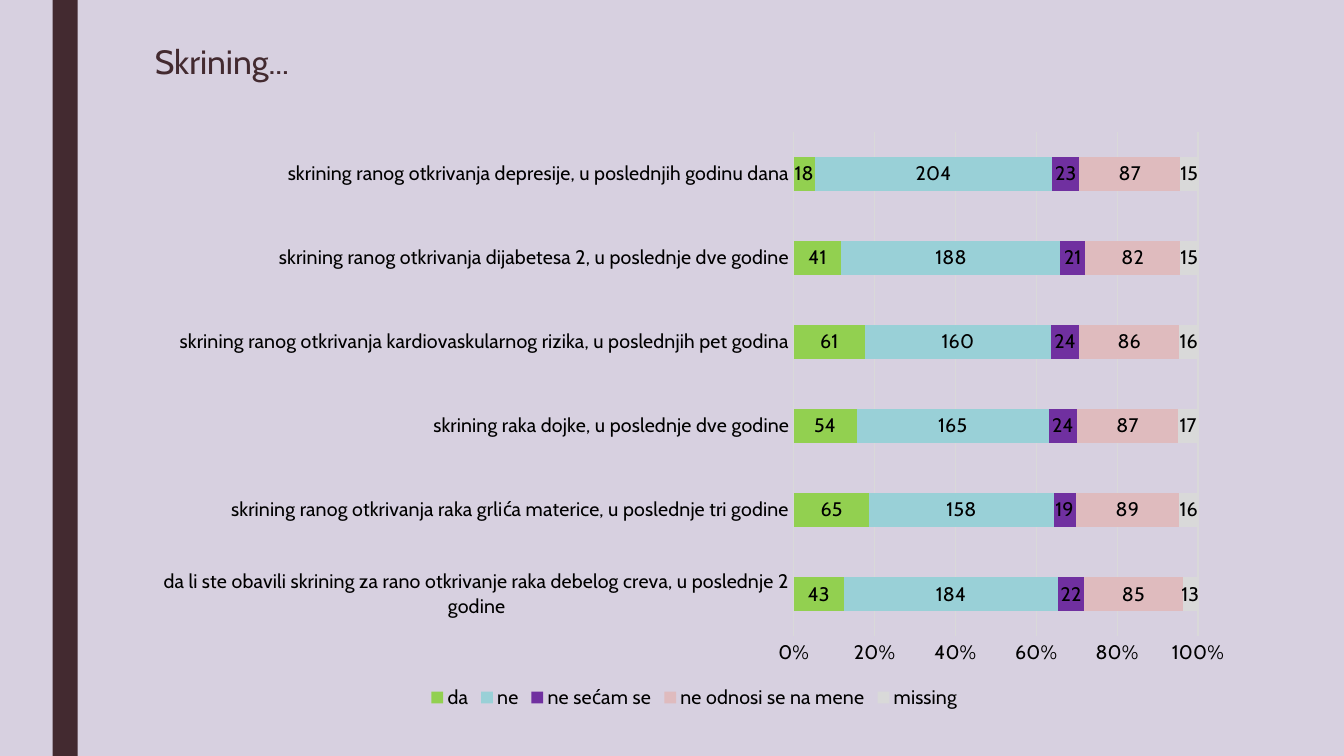
from lxml import etree
from pptx import Presentation
from pptx.chart.data import CategoryChartData
from pptx.dml.color import RGBColor
from pptx.enum.chart import XL_CHART_TYPE, XL_LABEL_POSITION, XL_LEGEND_POSITION, XL_TICK_MARK
from pptx.enum.shapes import MSO_SHAPE
from pptx.enum.text import MSO_ANCHOR
from pptx.oxml import parse_xml
from pptx.oxml.ns import nsdecls, qn
from pptx.util import Pt

FONT = "Cabin"
BACKGROUND, DARK, GREY, BLACK = "D7D0E0", "432A30", "D9D9D9", "000000"

# Categories run from the bottom bar to the top bar
SCREENINGS = [
    "da li ste obavili skrining za rano otkrivanje raka debelog creva, u poslednje 2 godine",
    "skrining ranog otkrivanja raka grlića materice, u poslednje tri godine",
    "skrining raka dojke, u poslednje dve godine",
    "skrining ranog otkrivanja kardiovaskularnog rizika, u poslednjih pet godina",
    "skrining ranog otkrivanja dijabetesa 2, u poslednje dve godine",
    "skrining ranog otkrivanja depresije, u poslednjih godinu dana",
]
ANSWERS = [
    ("da", "92D050", (43, 65, 54, 61, 41, 18)),
    ("ne", "99D0D7", (184, 158, 165, 160, 188, 204)),
    ("ne sećam se", "7030A0", (22, 19, 24, 24, 21, 23)),
    ("ne odnosi se na mene", "DFBBBE", (85, 89, 87, 86, 82, 87)),
    ("missing", GREY, (13, 16, 17, 16, 15, 15)),
]


def rgb(value):
    return RGBColor.from_string(value)


def set_font(font, size, color):
    font.name, font.size = FONT, Pt(size)
    font.color.rgb = rgb(color)


def set_line(line, color, width):
    line.color.rgb = rgb(color)
    line.width = Pt(width)


def add_side_band(s, x, y, w, h):
    sp = s.shapes.add_shape(MSO_SHAPE.RECTANGLE, Pt(x), Pt(y), Pt(w), Pt(h))
    sp.shadow.inherit = False
    sp.fill.solid()
    sp.fill.fore_color.rgb = rgb(DARK)
    sp.line.fill.background()


def add_title(s, text, x, y, w, h):
    tf = s.shapes.add_textbox(Pt(x), Pt(y), Pt(w), Pt(h)).text_frame
    tf.word_wrap = True
    tf.vertical_anchor = MSO_ANCHOR.TOP
    p = tf.paragraphs[0]
    p.text = text
    p.line_spacing = 0.89
    set_font(p.font, 24, DARK)


def set_plot_box(chart, **box):
    """Fix the inner plot area, in fractions of the chart."""
    plot_area = chart._chartSpace.chart.plotArea
    for old in plot_area.findall(qn("c:layout")):
        plot_area.remove(old)
    layout = parse_xml(f"<c:layout {nsdecls('c')}><c:manualLayout/></c:layout>")
    settings = {"layoutTarget": "inner", "xMode": "edge", "yMode": "edge", **box}
    for tag, value in settings.items():
        etree.SubElement(layout[0], qn(f"c:{tag}")).set("val", str(value))
    plot_area.insert(0, layout)


def add_answer_chart(s, x, y, w, h):
    data = CategoryChartData()
    data.categories = SCREENINGS
    for name, _, values in ANSWERS:
        data.add_series(name, values)
    chart = s.shapes.add_chart(
        XL_CHART_TYPE.BAR_STACKED_100, Pt(x), Pt(y), Pt(w), Pt(h), data).chart
    set_font(chart.font, 14, BLACK)
    chart.has_title = False
    set_plot_box(chart, x=0.59, y=0.02, w=0.366, h=0.85)

    # Bars and their values
    plot = chart.plots[0]
    plot.gap_width, plot.overlap = 150, 100
    plot.vary_by_categories = False
    for series, (_, color, _) in zip(plot.series, ANSWERS):
        series.format.fill.solid()
        series.format.fill.fore_color.rgb = rgb(color)
        labels = series.data_labels
        labels.show_value = True
        labels.position = XL_LABEL_POSITION.CENTER
        set_font(labels.font, 14, BLACK)

    # Axes
    for axis in (chart.category_axis, chart.value_axis):
        axis.major_tick_mark = axis.minor_tick_mark = XL_TICK_MARK.NONE
        set_font(axis.tick_labels.font, 14, BLACK)
    set_line(chart.category_axis.format.line, GREY, 0.75)
    axis = chart.value_axis
    axis.minimum_scale, axis.maximum_scale, axis.major_unit = 0, 1, 0.2
    axis.format.line.fill.background()
    axis.tick_labels.number_format = "0%"
    axis.tick_labels.number_format_is_linked = False
    set_line(axis.major_gridlines.format.line, GREY, 0.75)

    # Legend
    chart.has_legend = True
    chart.legend.position = XL_LEGEND_POSITION.BOTTOM
    chart.legend.include_in_layout = False
    set_font(chart.legend.font, 14, BLACK)


def main():
    prs = Presentation()
    prs.slide_width, prs.slide_height = Pt(960), Pt(540)
    s = prs.slides.add_slide(prs.slide_layouts[6])
    s.background.fill.solid()
    s.background.fill.fore_color.rgb = rgb(BACKGROUND)
    add_side_band(s, 37.5, 0, 18, 540)
    add_title(s, "Skrining...", 103.5, 29, 233, 57)
    add_answer_chart(s, 101.5, 85.7, 789, 424)
    prs.save("out.pptx")


if __name__ == "__main__":
    main()
